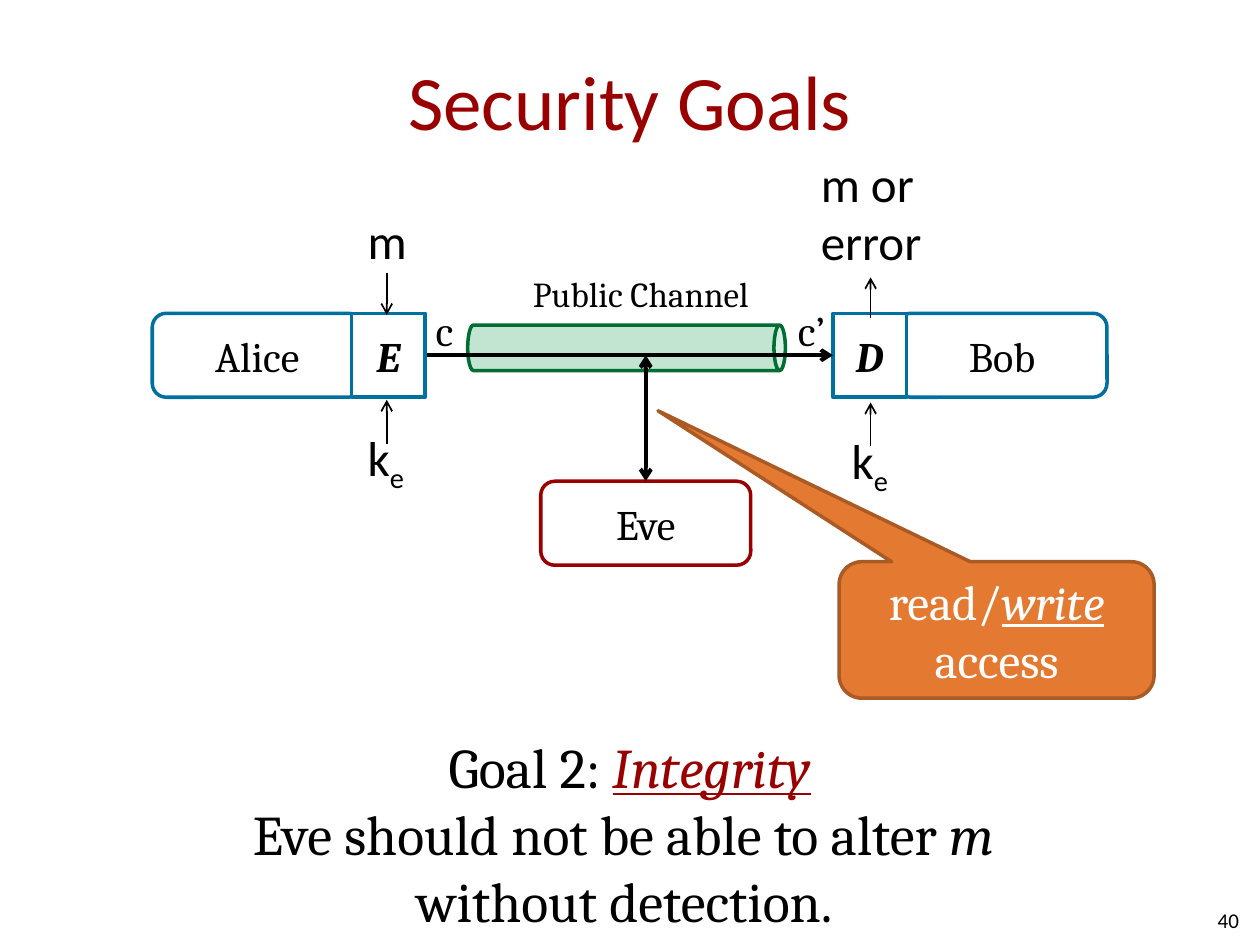
"""Build the Security Goals slide: Alice, Bob and Eve on a public channel."""
from lxml import etree
from pptx import Presentation
from pptx.dml.color import RGBColor
from pptx.enum.shapes import MSO_CONNECTOR, MSO_SHAPE as Preset
from pptx.enum.text import MSO_ANCHOR as Anchor, MSO_AUTO_SIZE as AutoSize, PP_ALIGN as Align
from pptx.oxml.ns import qn
from pptx.util import Pt

BLACK, WHITE, RED, BLUE = "000000", "FFFFFF", "990000", "00709E"
color = RGBColor.from_string


def write(shape, paragraphs, size, font="Cambria", ink=BLACK, align=Align.CENTER,
          anchor=Anchor.MIDDLE, margins=(0, 0), wrap=True):
    """Fill a shape with paragraphs of (text, style letters[, colour]) runs."""
    frame = shape.text_frame
    frame.word_wrap, frame.auto_size, frame.vertical_anchor = wrap, AutoSize.NONE, anchor
    frame.margin_left = frame.margin_right = Pt(margins[0])
    frame.margin_top = frame.margin_bottom = Pt(margins[1])
    for index, runs in enumerate(paragraphs):
        paragraph = frame.add_paragraph() if index else frame.paragraphs[0]
        paragraph.alignment = align
        paragraph.font.size, paragraph.font.name = Pt(size), font
        paragraph.font.color.rgb = color(ink)
        for text, style, *own_color in runs:
            if text == "\n":
                paragraph.add_line_break()
                continue
            run = paragraph.add_run()
            run.text = text
            if "b" in style:
                run.font.bold = True
            if "i" in style:
                run.font.italic = True
            if "u" in style:
                run.font.underline = True
            if "s" in style:
                run._r.get_or_add_rPr().set("baseline", "-25000")
            if own_color:
                run.font.color.rgb = color(own_color[0])


def add_shape(preset, box, fill, line):
    """Add a flat preset shape with a 2 pt outline."""
    shape = slide.shapes.add_shape(preset, *map(Pt, box))
    shape.shadow.inherit = False
    shape.fill.solid()
    shape.fill.fore_color.rgb = color(fill)
    shape.line.color.rgb = color(line)
    shape.line.width = Pt(2)
    return shape


presentation = Presentation()
presentation.slide_width, presentation.slide_height = Pt(720), Pt(540)
slide = presentation.slides.add_slide(presentation.slide_layouts[5])

title = slide.shapes.title
title.left, title.top, title.width, title.height = map(Pt, (36, 12, 648, 90))
write(title, [[("Security Goals", "")]], 44, "Calibri", RED, margins=(0, 3.6))

channel = add_shape(Preset.CAN, (345, 108, 26, 181.5), "009446", "006D34")
channel.rotation = 90
channel_color = channel.fill._xPr.find(qn("a:solidFill"))[0]
etree.SubElement(channel_color, qn("a:alpha")).set("val", "24000")

for name, preset, left, top, width, line, style in (
    ("Alice", Preset.ROUNDED_RECTANGLE, 87, 179, 120, BLUE, ""),
    ("Bob", Preset.ROUNDED_RECTANGLE, 512.6, 179, 120, BLUE, ""),
    ("Eve", Preset.ROUNDED_RECTANGLE, 309, 275, 120, RED, ""),
    ("E", Preset.RECTANGLE, 201, 179, 42, BLUE, "bi"),
    ("D", Preset.RECTANGLE, 476, 179, 42, BLUE, "bi"),
):
    box = add_shape(preset, (left, top, width, 48), WHITE, line)
    write(box, [[(name, style)]], 24)

for start, end, width, ends in (
    ((244, 203), (476, 203), 2.25, ["tailEnd"]),
    ((369, 275), (369, 203), 2.25, ["headEnd", "tailEnd"]),
    ((221, 156), (221, 180), 1, ["tailEnd"]),
    ((221, 253.5), (221, 228.5), 1, ["tailEnd"]),
    ((497.5, 255), (497.5, 230), 1, ["tailEnd"]),
    ((497.5, 158.5), (497.5, 182), 1, ["headEnd"]),
):
    arrow = slide.shapes.add_connector(MSO_CONNECTOR.STRAIGHT, *map(Pt, start + end))
    arrow.line.color.rgb = color(BLACK)
    arrow.line.width = Pt(width)
    for arrow_end in ends:
        etree.SubElement(arrow.line._get_or_add_ln(), qn("a:" + arrow_end)).set("type", "arrow")
    etree.SubElement(arrow._element.spPr, qn("a:effectLst"))

key = [("k", ""), ("e", "s")]
for runs, box, size, font, margins in (
    ([("Public Channel", "")], (304.5, 156, 128, 24.5), 20, "Cambria", (0, 0)),
    ([("c", "")], (249, 174, 11, 29), 24, "Cambria", (0, 0)),
    ([("c’", "")], (456, 174, 16.5, 29), 24, "Cambria", (0, 0)),
    ([("m", "")], (203, 116.5, 36, 36), 28, "Calibri", (7.2, 3.6)),
    ([("m or ", ""), ("\n", ""), ("error", "")], (462, 84, 72, 72), 28, "Calibri", (7.2, 3.6)),
    (key, (203, 240.5, 36.7, 41), 28, "Calibri", (7.2, 3.6)),
    (key, (479.5, 242.5, 36.7, 41), 28, "Calibri", (7.2, 3.6)),
):
    label = slide.shapes.add_textbox(*map(Pt, box))
    write(label, [runs], size, font, align=Align.LEFT, anchor=Anchor.TOP,
          margins=margins, wrap=False)

callout = add_shape(Preset.ROUNDED_RECTANGULAR_CALLOUT, (479.5, 321, 180, 78), "E47932", "A95A25")
for index, value in enumerate((-1.075, -1.606, 0.167)):
    callout.adjustments[index] = value
write(callout, [[("read/", ""), ("write", "iu"), (" access", "")]], 28, ink=WHITE,
      margins=(7.2, 3.6))

goal = slide.shapes.add_textbox(Pt(134.5), Pt(418.5), Pt(451), Pt(116.5))
write(goal, [
    [("Goal 2: ", ""), ("Integrity", "iu", RED)],
    [("Eve should not be able to alter ", ""), ("m ", "i"), ("\n", ""),
     ("without detection. ", "")],
], 32, anchor=Anchor.TOP, wrap=False)

page_number = slide.shapes.add_textbox(Pt(540), Pt(511), Pt(168), Pt(29))
write(page_number, [[("40", "")]], 12, "Calibri", align=Align.RIGHT)

presentation.save("out.pptx")
